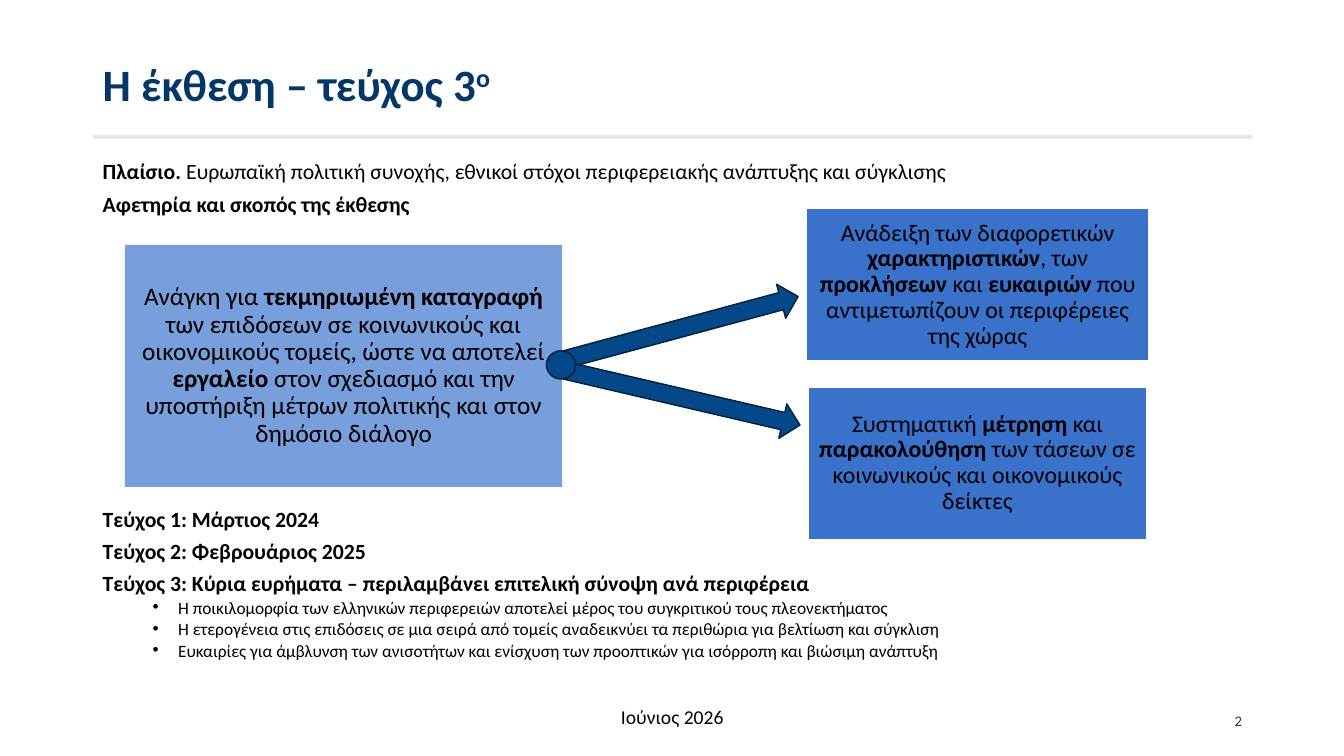
from lxml.etree import SubElement
from pptx import Presentation
from pptx.dml.color import RGBColor
from pptx.enum.shapes import MSO_CONNECTOR, MSO_SHAPE
from pptx.enum.text import MSO_ANCHOR, PP_ALIGN
from pptx.oxml.ns import qn
from pptx.util import Cm, Pt

# Content: *...* marks bold, ^...^ marks superscript
TITLE = "*Η έκθεση – τεύχος 3**^ο^*"
INTRO = [
    "*Πλαίσιο. *Ευρωπαϊκή πολιτική συνοχής, εθνικοί στόχοι περιφερειακής ανάπτυξης και σύγκλισης",
    "*Αφετηρία και σκοπός της έκθεσης*",
]
ISSUES = [
    "*Τεύχος 1: Μάρτιος 2024*",
    "*Τεύχος 2: Φεβρουάριος 2025*",
    "*Τεύχος 3: Κύρια ευρήματα – περιλαμβάνει επιτελική σύνοψη ανά περιφέρεια*",
]
POINTS = [
    "Η ποικιλομορφία των ελληνικών περιφερειών αποτελεί μέρος του συγκριτικού τους πλεονεκτήματος",
    "Η ετερογένεια στις επιδόσεις σε μια σειρά από τομείς αναδεικνύει τα περιθώρια για βελτίωση και σύγκλιση",
    "Ευκαιρίες για άμβλυνση των ανισοτήτων και ενίσχυση των προοπτικών για ισόρροπη και βιώσιμη ανάπτυξη",
]
# Text, place in cm, fill, edge, text size
CARDS = [
    ("Ανάδειξη των διαφορετικών *χαρακτηριστικών*, των *προκλήσεων* και *ευκαιριών* "
     "που αντιμετωπίζουν οι περιφέρειες της χώρας",
     (20.32, 5.26, 8.64, 3.84), "3971CB", "FFFFFF", 17),
    ("Συστηματική *μέτρηση* και *παρακολούθηση* των τάσεων σε κοινωνικούς και "
     "οικονομικούς δείκτες",
     (20.37, 9.75, 8.53, 3.84), "3971CB", "FFFFFF", 17),
    ("Ανάγκη για *τεκμηριωμένη καταγραφή* των επιδόσεων σε κοινωνικούς και "
     "οικονομικούς τομείς, ώστε να αποτελεί *εργαλείο *στον σχεδιασμό και την "
     "υποστήριξη μέτρων πολιτικής και στον δημόσιο διάλογο",
     (3.15, 6.17, 11.02, 6.1), "799EDC", None, 18),
]
# Preset, place in cm, rotation
MARKS = [
    (MSO_SHAPE.RIGHT_ARROW, (14.15, 7.82, 6.07, 0.89), 344.9),
    (MSO_SHAPE.RIGHT_ARROW, (14.17, 9.58, 6.07, 0.89), 13.1),
    (MSO_SHAPE.OVAL, (13.77, 8.84, 0.74, 0.71), 0),
]
LEFT, WIDTH = 2.34, 29.21
FOOT, FOOT_H = 17.65, 1.02


def color(code):
    return RGBColor.from_string(code)


def style(part, form):
    for name, value in form.items():
        setattr(part, name, value)


def write(frame, text, size, ink="000000", first=False, bullet=False, **form):
    para = frame.paragraphs[0] if first else frame.add_paragraph()
    if bullet:
        props = para._p.get_or_add_pPr()
        props.set("marL", str(Cm(1.9)))
        props.set("indent", str(-Cm(0.64)))
        SubElement(props, qn("a:buFont"), typeface="Arial")
        SubElement(props, qn("a:buChar"), char="•")
    style(para, form)
    for spot, piece in enumerate(text.split("*")):
        if not piece:
            continue
        run = para.add_run()
        run.text = piece.strip("^")
        style(run.font, {"name": "Calibri", "size": Pt(size), "bold": spot % 2 == 1})
        run.font.color.rgb = color(ink)
        if piece.startswith("^"):
            run._r.get_or_add_rPr().set("baseline", "30000")


def add_box(slide, place, anchor=MSO_ANCHOR.TOP):
    frame = slide.shapes.add_textbox(*map(Cm, place)).text_frame
    style(frame, {"word_wrap": True, "vertical_anchor": anchor})
    return frame


def add_form(slide, kind, place, fill, edge):
    shape = slide.shapes.add_shape(kind, *map(Cm, place))
    shape.shadow.inherit = False
    shape.fill.solid()
    shape.fill.fore_color.rgb = color(fill)
    if edge:
        shape.line.color.rgb = color(edge)
        shape.line.width = Pt(1)
    else:
        shape.line.fill.background()
    return shape


def main():
    deck = Presentation()
    style(deck, {"slide_width": Cm(33.87), "slide_height": Cm(19.05)})
    slide = deck.slides.add_slide(deck.slide_layouts[6])

    # Title and rule
    rule = slide.shapes.add_connector(
        MSO_CONNECTOR.STRAIGHT, Cm(LEFT), Cm(3.45), Cm(LEFT + WIDTH), Cm(3.45))
    rule.line.color.rgb = color("E7E6E6")
    rule.line.width = Pt(3)
    SubElement(rule._element.spPr, qn("a:effectLst"))
    frame = add_box(slide, (LEFT, 0.94, WIDTH, 2.49), MSO_ANCHOR.MIDDLE)
    write(frame, TITLE, 32, "043668", first=True, line_spacing=0.9)

    # Running text above and below the diagram
    for top, high, lines, points in [(4.04, 1.6, INTRO, []), (12.8, 4.4, ISSUES, POINTS)]:
        frame = add_box(slide, (LEFT, top, WIDTH, high))
        for spot, line in enumerate(lines):
            write(frame, line, 15.5, first=spot == 0, line_spacing=0.7,
                  space_before=Pt(10 if spot else 0))
        for point in points:
            write(frame, point, 12.4, bullet=True, line_spacing=0.7, space_before=Pt(5))

    # Diagram cards
    for text, place, fill, edge, size in CARDS:
        frame = add_form(slide, MSO_SHAPE.RECTANGLE, place, fill, edge).text_frame
        style(frame, {"word_wrap": True, "vertical_anchor": MSO_ANCHOR.MIDDLE})
        style(frame, {f"margin_{side}": Cm(0.18) for side in ("left", "top", "right", "bottom")})
        write(frame, text, size, first=True, alignment=PP_ALIGN.CENTER, line_spacing=0.9)

    # Arrows and their hub
    for kind, place, turn in MARKS:
        add_form(slide, kind, place, "05488A", "02203C").rotation = turn

    # Footer
    frame = add_box(slide, (11.23, FOOT, 11.43, FOOT_H))
    write(frame, "Ιούνιος 2026", 14, first=True, alignment=PP_ALIGN.CENTER)
    frame = add_box(slide, (23.93, FOOT, 7.62, FOOT_H), MSO_ANCHOR.MIDDLE)
    write(frame, "2", 10.5, "333333", first=True, alignment=PP_ALIGN.RIGHT)

    deck.save("out.pptx")


if __name__ == "__main__":
    main()
